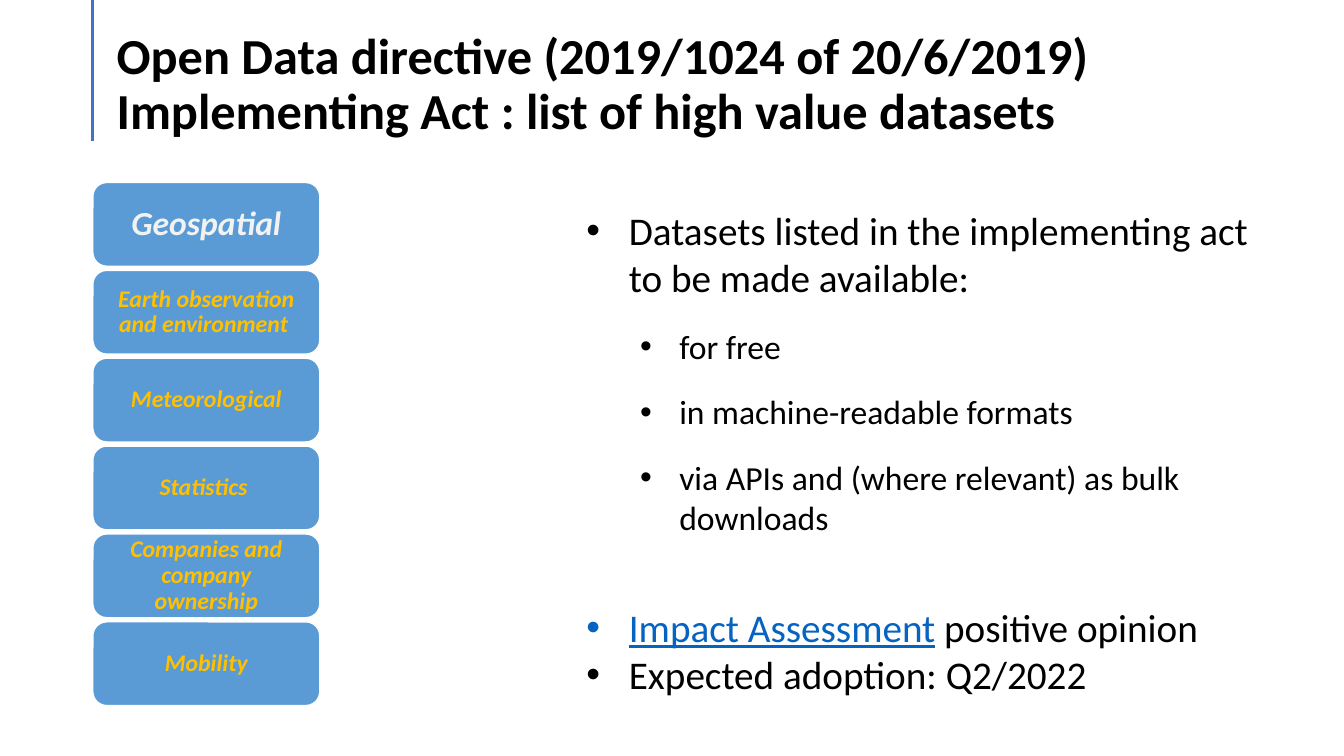
from lxml.etree import SubElement
from pptx import Presentation
from pptx.dml.color import RGBColor
from pptx.enum.shapes import MSO_CONNECTOR, MSO_SHAPE
from pptx.enum.text import MSO_ANCHOR, PP_ALIGN
from pptx.oxml.ns import qn
from pptx.util import Cm, Pt

COLORS = {
    "text": "000000",
    "rule": "4472C4",
    "category": "5B9BD5",
    "outline": "FFFFFF",
    "highlight": "F2F2F2",
    "label": "FFC000",
    "link": "0563C1",
}

TITLE = ("Open Data directive (2019/1024 of 20/6/2019)\v"
         "Implementing Act : list of high value datasets")

CATEGORIES = [
    "Geospatial",
    "Earth observation and environment ",
    "Meteorological",
    "Statistics ",
    "Companies and company ownership",
    "Mobility",
]

# Level, space before in points, runs of (wording, is underlined)
POINTS = [
    (0, 0, [("Datasets listed in the implementing act to be made available:", False)]),
    (1, 18, [("for free", False)]),
    (1, 18, [("in machine-readable formats", False)]),
    (1, 18, [("via APIs and (where relevant) as bulk downloads", False)]),
    (0, 47, [("Impact Assessment", True), (" positive opinion", False)]),
    (0, 0, [("Expected adoption: Q2/2022", False)]),
]

# Text size in points, left margin and hanging indent in centimetres
LEVELS = [(28, 1.27, -1.07), (24, 2.54, -0.99)]


def rgb(name):
    return RGBColor.from_string(COLORS[name])


def apply_format(target, values):
    for name, value in values.items():
        setattr(target, name, value)


def add_run(paragraph, wording, color, **font_format):
    run = paragraph.add_run()
    run.text = wording
    apply_format(run.font, {"name": "Calibri", **font_format})
    run.font.color.rgb = rgb(color)


def set_bullet(paragraph, margin, indent):
    properties = paragraph._p.get_or_add_pPr()
    properties.set("marL", str(Cm(margin)))
    properties.set("indent", str(Cm(indent)))
    SubElement(properties, qn("a:buFont"), typeface="Arial")
    SubElement(properties, qn("a:buChar"), char="•")


def add_rule(slide, x, top, bottom):
    rule = slide.shapes.add_connector(
        MSO_CONNECTOR.STRAIGHT, Cm(x), Cm(top), Cm(x), Cm(bottom))
    rule.line.color.rgb = rgb("rule")
    rule.line.width = Pt(2.25)
    SubElement(rule._element.spPr, qn("a:effectLst"))


def add_title(slide, left, top, width, height):
    frame = slide.shapes.add_textbox(Cm(left), Cm(top), Cm(width), Cm(height)).text_frame
    apply_format(frame, {"word_wrap": True, "vertical_anchor": MSO_ANCHOR.BOTTOM,
                         "margin_bottom": 0})
    heading = frame.paragraphs[0]
    heading.line_spacing = 0.9
    for index, line in enumerate(TITLE.split("\v")):
        if index:
            heading.add_line_break()
        add_run(heading, line, "text", size=Pt(36), bold=True)


def add_categories(slide, left, top, width, height):
    """Stack the category boxes evenly; the first one is emphasised."""
    box_height = 2.11
    pitch = (height - box_height) / (len(CATEGORIES) - 1)
    for index, category in enumerate(CATEGORIES):
        box = slide.shapes.add_shape(
            MSO_SHAPE.ROUNDED_RECTANGLE,
            Cm(left), Cm(top + index * pitch), Cm(width), Cm(box_height))
        box.shadow.inherit = False
        box.fill.solid()
        box.fill.fore_color.rgb = rgb("category")
        box.line.color.rgb = rgb("outline")
        box.line.width = Pt(1)
        apply_format(box.text_frame, {
            "word_wrap": True, "vertical_anchor": MSO_ANCHOR.MIDDLE,
            "margin_left": Cm(0.28), "margin_right": Cm(0.28),
            "margin_top": Cm(0.2), "margin_bottom": Cm(0.2)})
        label = box.text_frame.paragraphs[0]
        apply_format(label, {"alignment": PP_ALIGN.CENTER, "line_spacing": 0.9})
        color, size = ("label", 17) if index else ("highlight", 24)
        add_run(label, category, color, size=Pt(size), bold=True, italic=True)


def add_points(slide, left, top, width, height):
    frame = slide.shapes.add_textbox(Cm(left), Cm(top), Cm(width), Cm(height)).text_frame
    frame.word_wrap = True
    for index, (level, space_before, runs) in enumerate(POINTS):
        point = frame.add_paragraph() if index else frame.paragraphs[0]
        size, margin, indent = LEVELS[level]
        apply_format(point, {"level": level, "space_before": Pt(space_before)})
        set_bullet(point, margin, indent)
        for wording, underlined in runs:
            add_run(point, wording, "link" if underlined else "text",
                    size=Pt(size), underline=underlined)


def main():
    deck = Presentation()
    apply_format(deck, {"slide_width": Cm(33.87), "slide_height": Cm(19.05)})
    slide = deck.slides.add_slide(deck.slide_layouts[6])
    add_rule(slide, 2.34, 0, 3.56)
    add_title(slide, 2.69, 1.35, 29.21, 2.18)
    add_points(slide, 14.33, 5.08, 18.29, 10.8)
    add_categories(slide, 2.34, 4.6, 5.72, 13.18)
    deck.save("out.pptx")


if __name__ == "__main__":
    main()
